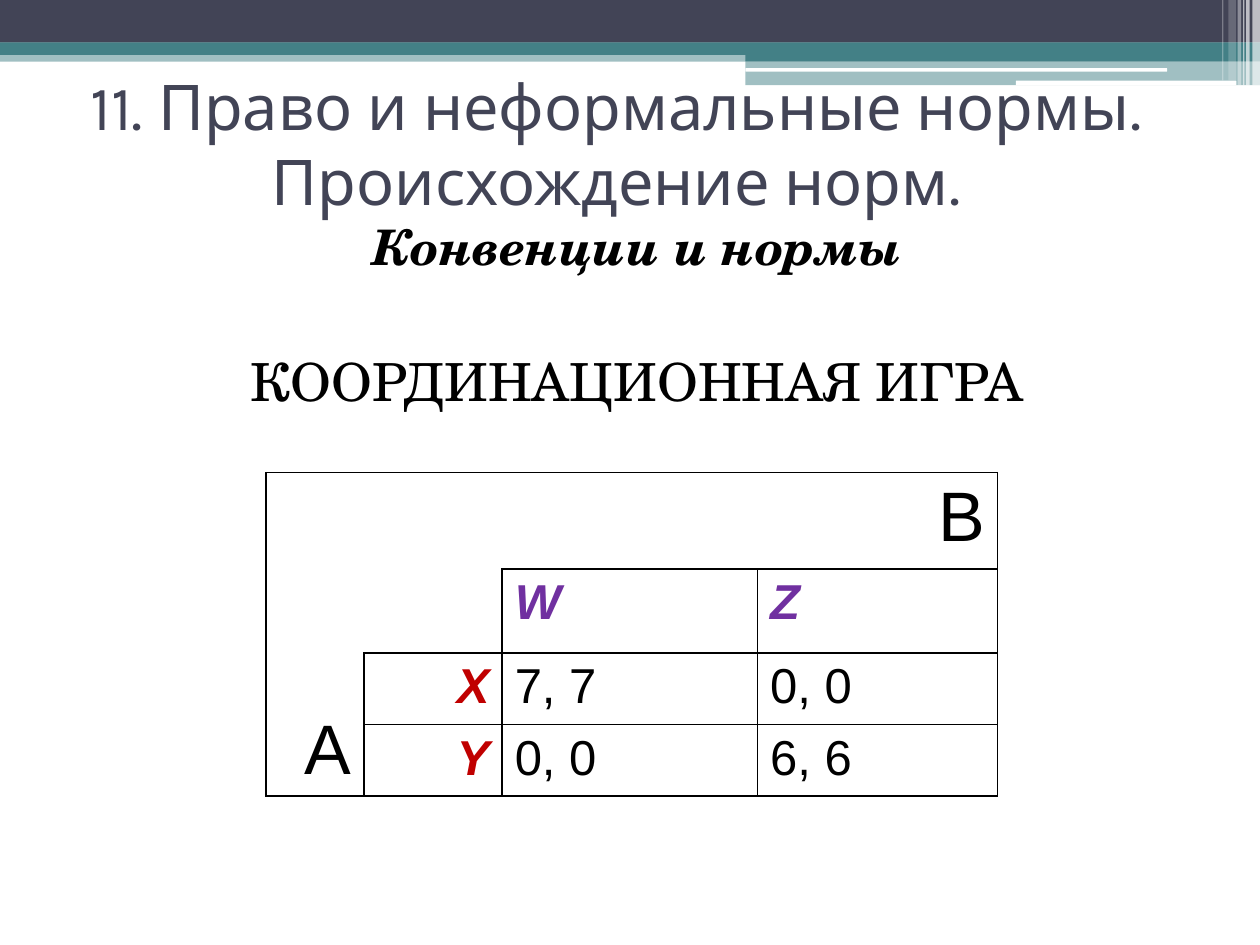
import pptx
import pptx.util
import pptx.dml.color
import pptx.enum.shapes
import pptx.enum.text
import pptx.oxml
import pptx.oxml.ns
from lxml import etree

Pt = pptx.util.Pt
qn = pptx.oxml.ns.qn
ALIGN = pptx.enum.text.PP_ALIGN
ANCHOR = pptx.enum.text.MSO_ANCHOR
SHAPE = pptx.enum.shapes.MSO_SHAPE

SLATE, TEAL, WHITE, BLACK = "424456", "438086", "FFFFFF", "000000"
PURPLE, RED = "7030A0", "C00000"


def colour(hex_code):
    return pptx.dml.color.RGBColor.from_string(hex_code)


def write(paragraph, text, font="Arial", size=28, color=BLACK, bold=False,
          italic=False, align=ALIGN.LEFT):
    paragraph.alignment = align
    run = paragraph.add_run()
    run.text = text
    run.font.name = font
    run.font.size = Pt(size)
    run.font.bold = bold
    run.font.italic = italic
    run.font.color.rgb = colour(color)


def add_bar(slide, box, color, opacity=100, rounded=False):
    kind = SHAPE.ROUNDED_RECTANGLE if rounded else SHAPE.RECTANGLE
    bar = slide.shapes.add_shape(kind, *map(Pt, box))
    bar.shadow.inherit = False
    bar.line.fill.background()
    bar.fill.solid()
    bar.fill.fore_color.rgb = colour(color)
    if opacity < 100:
        rgb = next(bar.element.iter(qn("a:srgbClr")))
        etree.SubElement(rgb, qn("a:alpha"), val=str(opacity * 1000))


def add_header_band(slide, left, top, width):
    right = left + width
    step = left + 426
    add_bar(slide, (left, top + 28.8, width, 6.5), TEAL, 50)
    add_bar(slide, (left, top, width, 24.4), SLATE)
    add_bar(slide, (left, top + 24.3, width, 7.1), TEAL)
    add_bar(slide, (step, top + 28, right - step, 7), TEAL)
    add_bar(slide, (step, top + 34.7, right - step, 14), TEAL, 50)
    add_bar(slide, (step, top + 38.9, 241, 2), WHITE, rounded=True)
    add_bar(slide, (left + 580.5, top + 46.1, 126, 2.7), WHITE, rounded=True)
    # Distance from the right edge, width, height, opacity
    for inset, stripe, height, opacity in (
            (4.4, 4.4, 49, 65), (7.9, 2, 49, 65), (9.6, 0.7, 49, 60),
            (12.8, 2, 49, 40), (18, 4.3, 46, 20), (21.6, 0.7, 46, 30)):
        add_bar(slide, (right - inset, top, stripe, height), WHITE, opacity)


def place_title(slide, left, top, width, height):
    title = slide.shapes.title
    title.left, title.top, title.width, title.height = map(
        Pt, (left, top, width, height))
    slide.shapes.element.append(title.element)  # in front of the band
    frame = title.text_frame
    frame.auto_size = pptx.enum.text.MSO_AUTO_SIZE.NONE
    frame.vertical_anchor = ANCHOR.MIDDLE
    write(frame.paragraphs[0],
          "11. Право и неформальные нормы. Происхождение норм.",
          font="Karla", size=36, color=SLATE, align=ALIGN.CENTER)


def add_headings(slide, left, top, width, height):
    frame = slide.shapes.add_textbox(
        *map(Pt, (left, top, width, height))).text_frame
    frame.word_wrap = True
    frame.margin_left = Pt(15.8)
    topic = frame.paragraphs[0]
    topic.line_spacing = 0.9
    write(topic, "Конвенции и нормы", font="TeX Gyre Schola", size=28,
          bold=True, italic=True, align=ALIGN.CENTER)
    game = frame.add_paragraph()
    game.space_before = Pt(42)
    write(game, "КООРДИНАЦИОННАЯ ИГРА", font="TeX Gyre Schola", size=30,
          align=ALIGN.CENTER)


def set_borders(cell, sides):
    """Draw the sides named by the letters in sides and clear the others."""
    properties = cell.fill and cell._tc.get_or_add_tcPr()
    for position, side in enumerate("LRTB"):
        line = etree.Element(qn("a:ln" + side), w=str(Pt(1)))
        if side in sides:
            fill = etree.SubElement(line, qn("a:solidFill"))
            etree.SubElement(fill, qn("a:srgbClr"), val=BLACK)
        else:
            etree.SubElement(line, qn("a:noFill"))
        properties.insert(position, line)


def add_payoff_table(slide, left, top, column_widths, row_heights):
    table = slide.shapes.add_table(
        len(row_heights), len(column_widths), Pt(left), Pt(top),
        Pt(sum(column_widths)), Pt(sum(row_heights))).table
    table.first_row = table.horz_banding = False
    for column, width in zip(table.columns, column_widths):
        column.width = Pt(width)
    for row, height in zip(table.rows, row_heights):
        row.height = Pt(height)

    borders = (("LT", "TR", "T", "TR"),
               ("LB", "RB", "LRTB", "LRTB"),
               ("L", "LRTB", "LRTB", "LRTB"),
               ("LB", "LRTB", "LRTB", "LRTB"))
    for row, row_borders in enumerate(borders):
        for column, sides in enumerate(row_borders):
            cell = table.cell(row, column)
            cell.fill.background()
            set_borders(cell, sides)
    table.cell(0, 1).merge(table.cell(0, 3))
    table.cell(1, 0).merge(table.cell(3, 0))
    table.cell(1, 0).vertical_anchor = ANCHOR.BOTTOM

    player = dict(size=40, align=ALIGN.RIGHT)
    move_b = dict(color=PURPLE, bold=True, italic=True)
    move_a = dict(color=RED, bold=True, italic=True, align=ALIGN.RIGHT)
    entries = ((0, 1, "B", player), (1, 0, "A", player),
               (1, 2, "W", move_b), (1, 3, "Z", move_b),
               (2, 1, "X", move_a), (3, 1, "Y", move_a),
               (2, 2, "7, 7", {}), (2, 3, "0, 0", {}),
               (3, 2, "0, 0", {}), (3, 3, "6, 6", {}))
    for row, column, text, style in entries:
        write(table.cell(row, column).text_frame.paragraphs[0], text, **style)


def main():
    deck = pptx.Presentation()
    deck.slide_width, deck.slide_height = Pt(720), Pt(540)
    slide = deck.slides.add_slide(deck.slide_layouts[5])
    add_header_band(slide, 0, 0, 720)
    place_title(slide, 28, 39.6, 648, 84.2)
    add_headings(slide, 36, 123.8, 648, 394)
    add_payoff_table(slide, 152, 270, (56, 79, 146, 137), (52, 48, 38.4, 38.4))
    deck.save("out.pptx")


if __name__ == "__main__":
    main()
